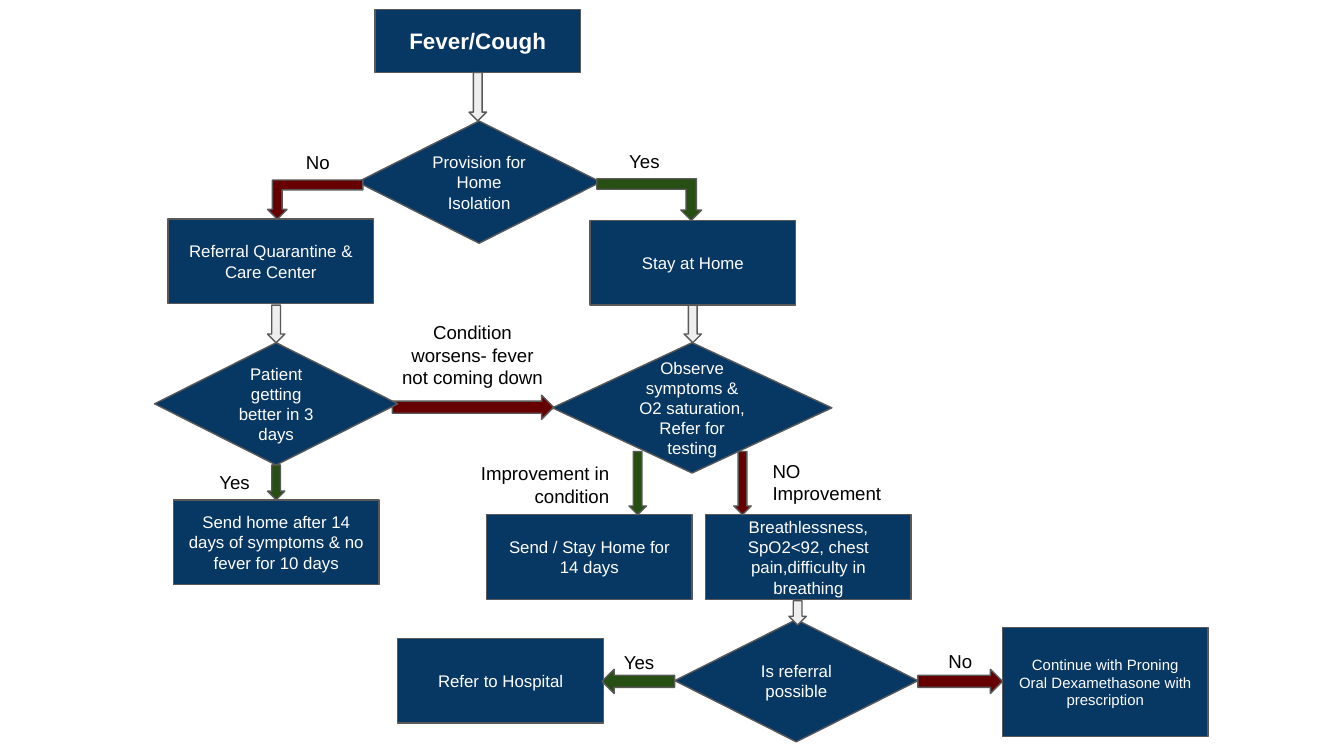
from pptx import Presentation
from pptx.dml.color import RGBColor
from pptx.enum.shapes import MSO_SHAPE
from pptx.enum.text import MSO_ANCHOR, PP_ALIGN
from pptx.util import Inches, Pt

NAVY, GRAY, GREEN, RED = "073763", "EEEEEE", "274E13", "660000"
EDGE, WHITE, BLACK = "595959", "FFFFFF", "000000"
WIDE, HIGH = 1.53, 0.63
THIN, THICK = 0.13, 0.18


def color(code):
    """Return the colour for a hex string."""
    return RGBColor.from_string(code)


def write(shape, text, size, code, align=PP_ALIGN.CENTER, bold=False):
    """Fill a shape with evenly styled text."""
    frame = shape.text_frame
    frame.word_wrap = True
    frame.margin_left = frame.margin_right = Inches(0.1)
    frame.margin_top = frame.margin_bottom = Inches(0.1)
    frame.text = text
    for line in frame.paragraphs:
        line.alignment = align
        line.font.name = "Arial"
        line.font.size = Pt(size)
        line.font.bold = bold
        line.font.color.rgb = color(code)


def draw(slide, kind, left, top, width, height, fill):
    """Add a filled and outlined preset shape."""
    shape = slide.shapes.add_shape(
        kind, Inches(left), Inches(top), Inches(width), Inches(height))
    shape.shadow.inherit = False
    shape.fill.solid()
    shape.fill.fore_color.rgb = color(fill)
    shape.line.color.rgb = color(EDGE)
    shape.line.width = Pt(0.75)
    return shape


def node(slide, kind, text, left, top, width, height, size=9, bold=False):
    """Add a navy flowchart node with centred text."""
    shape = draw(slide, kind, left, top, width, height, NAVY)
    shape.text_frame.vertical_anchor = MSO_ANCHOR.MIDDLE
    write(shape, text, size, WHITE, bold=bold)


def box(slide, text, left, top, height=HIGH, size=9, bold=False):
    """Add a step box."""
    node(slide, MSO_SHAPE.RECTANGLE, text, left, top, WIDE, height, size, bold)


def choice(slide, text, left, top, width=1.81, height=0.91):
    """Add a decision diamond."""
    node(slide, MSO_SHAPE.DIAMOND, text, left, top, width, height)


def down(slide, left, top, height, fill=GRAY):
    """Add a downward arrow."""
    draw(slide, MSO_SHAPE.DOWN_ARROW, left, top, THIN, height, fill)


def side(slide, left, top, width, fill, flip=False):
    """Add a horizontal block arrow."""
    shape = draw(slide, MSO_SHAPE.RIGHT_ARROW, left, top, width, THICK, fill)
    if flip:
        mirror(shape)


def bend(slide, left, top, width, height, fill, flip=False):
    """Add an arrow that runs sideways and then turns down."""
    shape = draw(slide, MSO_SHAPE.BENT_UP_ARROW, left, top, width, height, fill)
    shape.rotation = 180
    if flip:
        mirror(shape)


def mirror(shape):
    """Flip a shape from left to right."""
    shape._element.spPr.get_or_add_xfrm().set("flipH", "1")


def label(slide, text, left, top, width=0.73, height=0.37,
          align=PP_ALIGN.CENTER):
    """Add a branch label."""
    shape = slide.shapes.add_textbox(
        Inches(left), Inches(top), Inches(width), Inches(height))
    write(shape, text, 10, BLACK, align)


def start(slide):
    """Draw the entry step and the home isolation decision."""
    box(slide, "Fever/Cough", 2.79, 0.07, 0.47, 12, True)
    down(slide, 3.49, 0.54, 0.36)
    choice(slide, "Provision for Home Isolation", 2.66, 0.9)
    bend(slide, 4.44, 1.33, 0.78, 0.31, GREEN, True)
    label(slide, "Yes", 4.43, 1.03)
    bend(slide, 1.99, 1.34, 0.71, 0.29, RED)
    label(slide, "No", 2, 1.04)


def center(slide):
    """Draw the care center branch."""
    box(slide, "Referral Quarantine & Care Center", 1.25, 1.63)
    down(slide, 1.99, 2.27, 0.28)
    side(slide, 2.92, 2.94, 1.2, RED)
    label(slide, "Condition worsens- fever not coming down",
          2.86, 2.29, 1.31, 0.71)
    choice(slide, "Patient getting better in 3 days", 1.15, 2.55)
    box(slide, "Send home after 14 days of symptoms & no fever for 10 days",
        1.29, 3.72)
    label(slide, "Yes", 1.38, 3.42)
    down(slide, 1.99, 3.46, 0.26, GREEN)


def home(slide):
    """Draw the stay at home branch."""
    box(slide, "Stay at Home", 4.39, 1.64)
    down(slide, 5.09, 2.27, 0.28)
    choice(slide, "Observe symptoms & O2 saturation, Refer for testing",
           4.11, 2.55, 2.08, 0.97)
    box(slide, "Send / Stay Home for 14 days", 3.62, 3.83)
    down(slide, 4.68, 3.36, 0.47, GREEN)
    label(slide, "Improvement in condition", 3.01, 3.34, 1.62, 0.54,
          PP_ALIGN.RIGHT)
    box(slide, "Breathlessness, SpO2<92, chest pain,difficulty in breathing",
        5.25, 3.83)
    down(slide, 5.46, 3.36, 0.47, RED)
    label(slide, "NO Improvement", 5.65, 3.32, 1.2, 0.54, PP_ALIGN.LEFT)


def refer(slide):
    """Draw the referral decision and its outcomes."""
    choice(slide, "Is referral possible", 5.02, 4.61)
    down(slide, 5.87, 4.47, 0.18)
    box(slide, "Continue with Proning\nOral Dexamethasone with prescription",
        7.46, 4.67, 0.81, 8)
    side(slide, 6.83, 4.98, 0.63, RED)
    label(slide, "No", 6.78, 4.75)
    box(slide, "Refer to Hospital", 2.96, 4.75)
    label(slide, "Yes", 4.39, 4.76)
    side(slide, 4.48, 4.98, 0.54, GREEN, True)


def main():
    """Build and save the flowchart slide."""
    deck = Presentation()
    deck.slide_width, deck.slide_height = Inches(10), Inches(10 * 9 / 16)
    slide = deck.slides.add_slide(deck.slide_layouts[6])
    for part in (start, center, home, refer):
        part(slide)
    deck.save("out.pptx")


if __name__ == "__main__":
    main()
